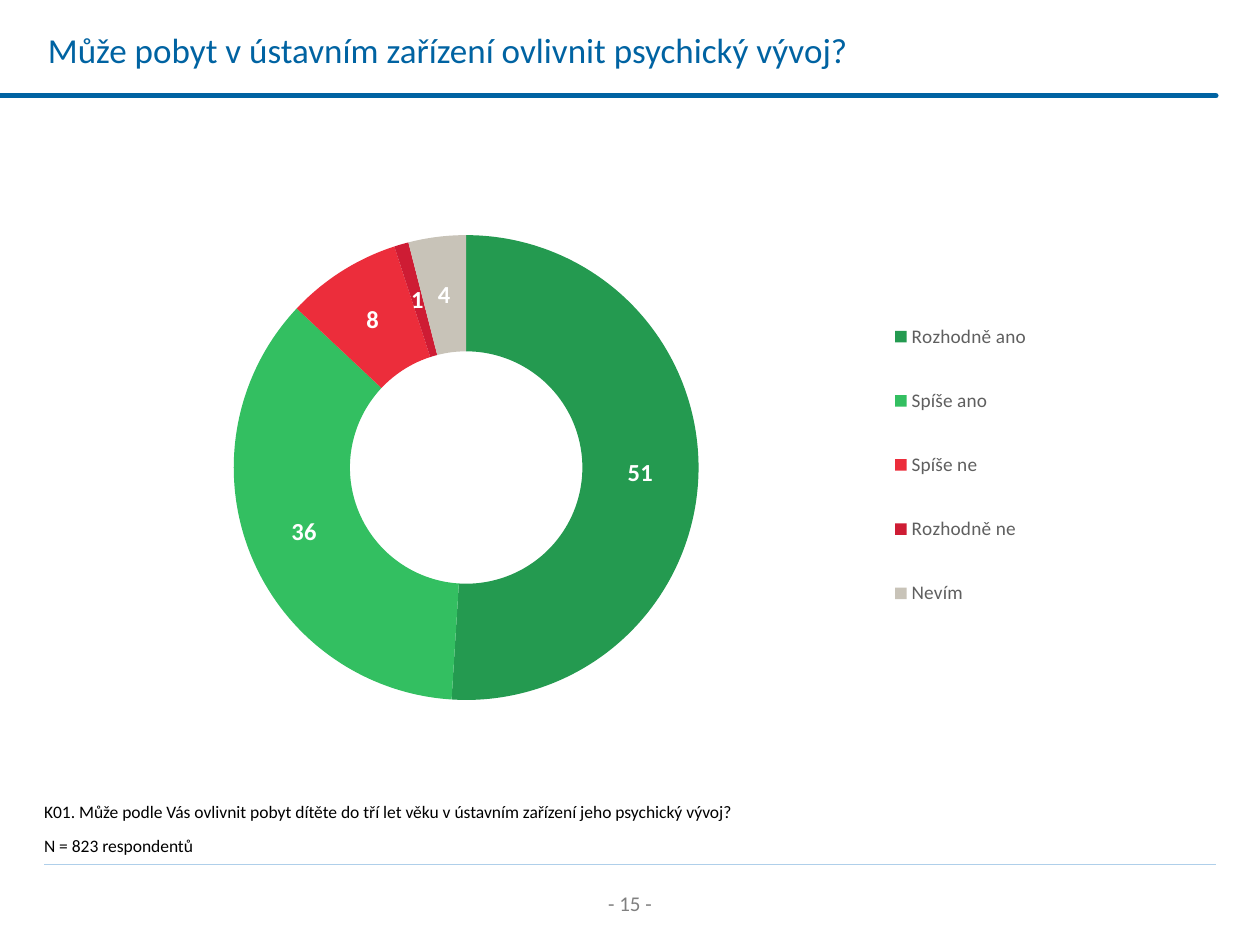
"""Build the survey slide with a doughnut chart of answers."""
from lxml.etree import SubElement
from pptx import Presentation
from pptx.chart.data import CategoryChartData
from pptx.dml.color import RGBColor
from pptx.enum.chart import XL_CHART_TYPE, XL_LEGEND_POSITION
from pptx.enum.text import MSO_ANCHOR, PP_ALIGN
from pptx.oxml.ns import qn
from pptx.util import Inches, Pt

BLUE = RGBColor(0x00, 0x63, 0xA2)
PALE = RGBColor(0xAF, 0xCF, 0xEA)
GRAY = RGBColor(0x80, 0x80, 0x80)
DARK = RGBColor(0x5F, 0x5F, 0x5F)
BLACK = RGBColor(0x00, 0x00, 0x00)
WHITE = RGBColor(0xFF, 0xFF, 0xFF)
FACE = "Calibri"

TITLE = "Může pobyt v ústavním zařízení ovlivnit psychický vývoj?"
NOTES = [
    "K01. Může podle Vás ovlivnit pobyt dítěte do tří let věku v ústavním zařízení jeho psychický vývoj?",
    "N = 823 respondentů",
]
PAGE = "- 15 -"
ANSWERS = [
    ("Rozhodně ano", 51, RGBColor(0x24, 0x9A, 0x50)),
    ("Spíše ano", 36, RGBColor(0x33, 0xBF, 0x61)),
    ("Spíše ne", 8, RGBColor(0xEC, 0x2D, 0x3B)),
    ("Rozhodně ne", 1, RGBColor(0xCE, 0x1C, 0x34)),
    ("Nevím", 4, RGBColor(0xC8, 0xC3, 0xB8)),
]
RULES = [
    (0.35, 6.86, PALE, 0.5, "flat"),
    (0, 0.76, BLUE, 3, "rnd"),
]
EDGE = 9.65


def style(font, size, color, bold=False):
    font.name, font.size, font.bold = FACE, Pt(size), bold
    font.color.rgb = color


def write(shape, text, size=10, color=BLACK, align=PP_ALIGN.LEFT,
          anchor=MSO_ANCHOR.TOP, left=0.1):
    frame = shape.text_frame
    frame.word_wrap = True
    frame.vertical_anchor = anchor
    frame.margin_left = Inches(left)
    para = frame.paragraphs[0]
    para.alignment = align
    run = para.add_run()
    run.text = text
    style(run.font, size, color)


def rule(slide, left, top, color, width, cap):
    line = slide.shapes.add_connector(
        1, Inches(left), Inches(top), Inches(EDGE), Inches(top))
    line.line.color.rgb = color
    line.line.width = Pt(width)
    line.line.fill.solid()
    line.line.color.rgb = color
    props = line._element.spPr
    props.find(qn("a:ln")).set("cap", cap)
    SubElement(props, qn("a:effectLst"))


def arrange(parent, index, box, inner=False):
    for old in parent.findall(qn("c:layout")):
        parent.remove(old)
    layout = SubElement(parent, qn("c:layout"))
    parent.insert(index, layout)
    manual = SubElement(layout, qn("c:manualLayout"))
    parts = [("layoutTarget", "inner")] if inner else []
    parts += [("xMode", "edge"), ("yMode", "edge"), *zip("xywh", box)]
    for tag, value in parts:
        SubElement(manual, qn(f"c:{tag}")).set("val", str(value))


def draw(slide):
    data = CategoryChartData(number_format="#,##0")
    data.categories = [name for name, _, _ in ANSWERS]
    data.add_series("Series 1", [value for _, value, _ in ANSWERS])
    chart = slide.shapes.add_chart(
        XL_CHART_TYPE.DOUGHNUT, Inches(1.07), Inches(1.6),
        Inches(7.85), Inches(4.1), data).chart
    style(chart.font, 18, BLACK)
    chart.has_title = False
    chart.has_legend = True
    legend = chart.legend
    legend.position = XL_LEGEND_POSITION.RIGHT
    legend.include_in_layout = False
    style(legend.font, 11, DARK)
    plot = chart.plots[0]
    plot.vary_by_categories = True
    series = plot.series[0]
    for index, (_, _, color) in enumerate(ANSWERS):
        fill = series.points[index].format.fill
        fill.solid()
        fill.fore_color.rgb = color
    labels = series.data_labels
    labels.show_value = True
    labels.show_percentage = False
    labels.number_format = "#,##0"
    labels.number_format_is_linked = False
    style(labels.font, 14, WHITE, bold=True)
    area = chart._chartSpace.chart.plotArea
    arrange(area, 0, (0.1, 0.06, 0.47, 0.91), inner=True)
    arrange(legend._element, 1, (0.73, 0.16, 0.21, 0.7))


def main():
    deck = Presentation()
    deck.slide_width, deck.slide_height = Inches(10), Inches(7.5)
    slide = deck.slides.add_slide(deck.slide_layouts[5])

    def place(shape, *box):
        shape.left, shape.top, shape.width, shape.height = map(Inches, box)
        return shape

    def text_box(*box):
        return slide.shapes.add_textbox(*map(Inches, box))

    for item in RULES:
        rule(slide, *item)
    title = place(slide.shapes.title, 0.28, 0, 8.92, 0.79)
    write(title, TITLE, size=20, color=BLUE, anchor=MSO_ANCHOR.MIDDLE)
    write(text_box(4.37, 7.02, 1.26, 0.3), PAGE, size=12, color=GRAY,
          align=PP_ALIGN.CENTER)
    for index, note in enumerate(NOTES):
        write(text_box(0.35, 6.31 + 0.27 * index, 9.3, 0.27), note, left=0)
    draw(slide)
    deck.save("out.pptx")


if __name__ == "__main__":
    main()
